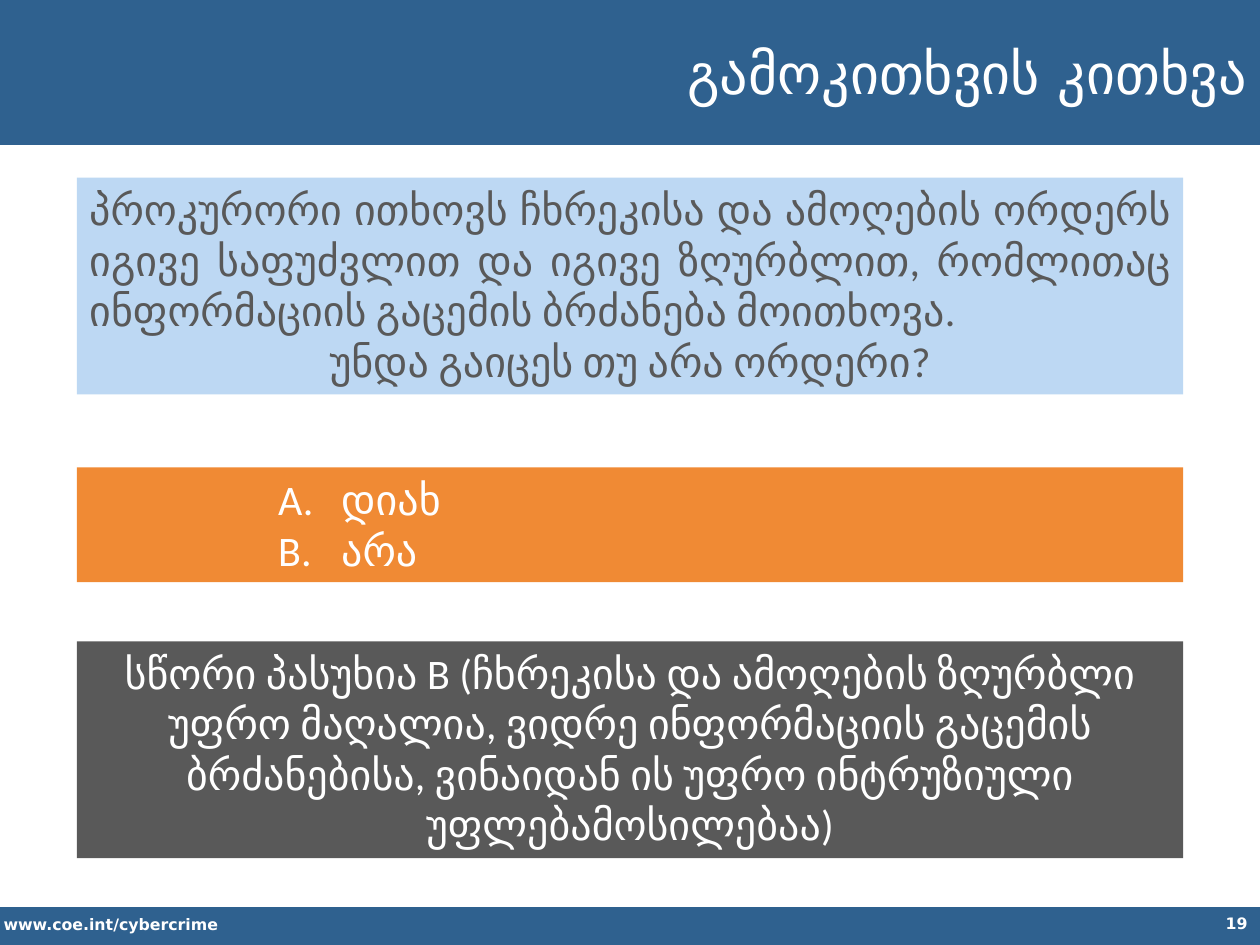
from lxml import etree
from pptx import Presentation
from pptx.dml.color import RGBColor
from pptx.enum import shapes, text
from pptx.oxml import ns
from pptx.util import Inches, Pt

WHITE = RGBColor(0xFF, 0xFF, 0xFF)
NAVY = RGBColor(0x2F, 0x61, 0x8F)
SKY = RGBColor(0xBD, 0xD8, 0xF3)
ORANGE = RGBColor(0xF0, 0x8A, 0x34)
GREY = RGBColor(0x59, 0x59, 0x59)

LEFT = text.PP_ALIGN.LEFT
RIGHT = text.PP_ALIGN.RIGHT
CENTER = text.PP_ALIGN.CENTER
JUSTIFY = text.PP_ALIGN.JUSTIFY


class PollSlide:
    """Draws the bands, labels and text panels of a poll question slide."""

    heading_font = "DejaVu Sans"
    body_font = "Calibri"
    panel_left, panel_width = 0.61, 8.78

    def __init__(self, deck):
        self.page = deck.slides.add_slide(deck.slide_layouts[6])

    def band(self, left, top, width, height, fill):
        box = self.page.shapes.add_shape(
            shapes.MSO_SHAPE.RECTANGLE,
            Inches(left), Inches(top), Inches(width), Inches(height))
        box.shadow.inherit = False
        box.fill.solid()
        box.fill.fore_color.rgb = fill
        box.line.fill.background()
        return box

    def add_words(self, para, words, align, size, font, color, bold=False):
        para.alignment = align
        span = para.add_run()
        span.text = words
        span.font.size = Pt(size)
        span.font.name = font
        span.font.bold = bold
        span.font.color.rgb = color

    def label(self, left, top, width, height, words, align):
        box = self.page.shapes.add_textbox(
            Inches(left), Inches(top), Inches(width), Inches(height))
        box.text_frame.word_wrap = True
        self.add_words(box.text_frame.paragraphs[0], words, align, 9,
                       self.heading_font, WHITE, bold=True)

    def title(self, words):
        box = self.band(2.2, 0.07, 7.8, 1.01, NAVY)
        box.text_frame.vertical_anchor = text.MSO_ANCHOR.MIDDLE
        self.add_words(box.text_frame.paragraphs[0], words, RIGHT, 32,
                       self.heading_font, WHITE)

    def panel(self, top, height, fill, color, lines, lettered=False):
        box = self.band(self.panel_left, top, self.panel_width, height, fill)
        frame = box.text_frame
        frame.word_wrap = True
        frame.vertical_anchor = text.MSO_ANCHOR.TOP
        for index, (words, align) in enumerate(lines):
            para = frame.add_paragraph() if index else frame.paragraphs[0]
            if lettered:
                self.letter(para)
            self.add_words(para, words, align, 24, self.body_font, color)

    def letter(self, para):
        properties = para._p.get_or_add_pPr()
        properties.set("marL", str(Inches(2)))
        properties.set("indent", str(Inches(-0.5)))
        etree.SubElement(properties, ns.qn("a:buFont"), typeface="+mj-lt")
        etree.SubElement(properties, ns.qn("a:buAutoNum"), type="alphaUcPeriod")


def main():
    deck = Presentation()
    deck.slide_width, deck.slide_height = Inches(10), Inches(7.5)
    poll = PollSlide(deck)
    poll.band(0, -0.03, 10, 1.18, NAVY)
    poll.band(0, 7.2, 10, 0.32, NAVY)
    poll.label(-0.07, 7.21, 3.52, 0.25, "www.coe.int/cybercrime", LEFT)
    poll.label(7.75, 7.2, 2.25, 0.31, "19", RIGHT)
    poll.title("გამოკითხვის კითხვა")
    poll.panel(1.41, 1.72, SKY, GREY, [
        ("პროკურორი ითხოვს ჩხრეკისა და ამოღების ორდერს იგივე საფუძვლით "
         "და იგივე ზღურბლით, რომლითაც ინფორმაციის გაცემის ბრძანება "
         "მოითხოვა.", JUSTIFY),
        ("უნდა გაიცეს თუ არა ორდერი?", CENTER)])
    poll.panel(5.09, 1.72, GREY, WHITE, [
        ("სწორი პასუხია B (ჩხრეკისა და ამოღების ზღურბლი უფრო მაღალია, "
         "ვიდრე ინფორმაციის გაცემის ბრძანებისა, ვინაიდან ის უფრო "
         "ინტრუზიული უფლებამოსილებაა)", CENTER)])
    poll.panel(3.71, 0.91, ORANGE, WHITE,
               [("დიახ", LEFT), ("არა", LEFT)], lettered=True)
    deck.save("out.pptx")


if __name__ == "__main__":
    main()
